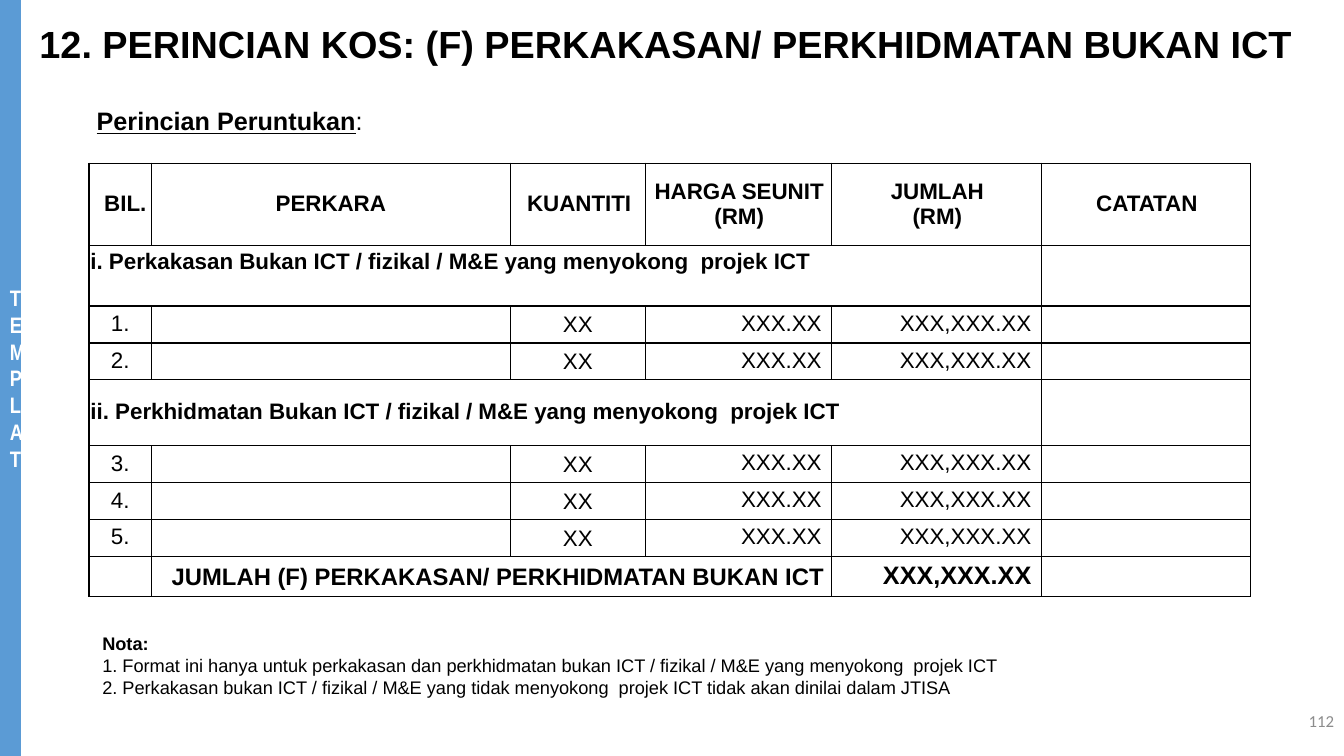
from dataclasses import dataclass

from lxml.etree import SubElement
from pptx import Presentation
from pptx.dml.color import RGBColor
from pptx.enum.shapes import MSO_SHAPE
from pptx.enum.text import MSO_ANCHOR as Anchor, PP_ALIGN as Align
from pptx.oxml.ns import qn
from pptx.util import Pt


@dataclass(frozen=True)
class Theme:
    font: str = "Arial"
    narrow: str = "Arial Narrow"
    number_font: str = "Calibri"
    ink: str = "000000"
    paper: str = "FFFFFF"
    bar: str = "5B9BD5"
    grey: str = "8C8C8C"
    title: int = 27
    heading: int = 18
    total: int = 17
    cell: int = 16
    note: int = 13
    number: int = 12


THEME = Theme()

COLUMNS = [44.6, 256.3, 96.5, 133.2, 149.8, 149.6]
HEADINGS = [["BIL."], ["PERKARA"], ["KUANTITI"], ["HARGA SEUNIT", "(RM)"],
            ["JUMLAH", "(RM)"], ["CATATAN"]]
HEADING_INSETS = [7.2, 0, 2, 1, 1, 1]
SECTIONS = [
    ("i. Perkakasan Bukan ICT / fizikal / M&E yang menyokong  projek ICT",
     43.5, Anchor.TOP, 5, ["1.", "2."]),
    ("ii. Perkhidmatan Bukan ICT / fizikal / M&E yang menyokong  projek ICT",
     47, Anchor.MIDDLE, 0, ["3.", "4.", "5."]),
]
HEADER_HEIGHT, ITEM_HEIGHT, TOTAL_HEIGHT = 58.5, 26.4, 28.6
LINE_SPACING = 15.7
NOTES = [
    "1. Format ini hanya untuk perkakasan dan perkhidmatan bukan ICT / fizikal / M&E "
    "yang menyokong  projek ICT",
    "2. Perkakasan bukan ICT / fizikal / M&E yang tidak menyokong  projek ICT "
    "tidak akan dinilai dalam JTISA",
]


def add_span(para, text, size, bold=False, color=THEME.ink, font=THEME.font):
    span = para.add_run()
    span.text = text
    span.font.name = font
    span.font.size = Pt(size)
    span.font.bold = bold
    span.font.color.rgb = RGBColor.from_string(color)
    return span


def add_text_box(page, left, top, width, height):
    frame = page.shapes.add_textbox(Pt(left), Pt(top), Pt(width), Pt(height)).text_frame
    frame.word_wrap = True
    return frame


def set_insets(cell, left=0, top=0, right=0, bottom=0):
    cell.margin_left, cell.margin_top = Pt(left), Pt(top)
    cell.margin_right, cell.margin_bottom = Pt(right), Pt(bottom)


def outline_cell(cell):
    """Clear the fill and draw a thin line on all four sides."""
    cell.fill.background()
    props = cell._tc.get_or_add_tcPr()
    for place, side in enumerate(("lnL", "lnR", "lnT", "lnB")):
        line = SubElement(props, qn(f"a:{side}"), w=str(Pt(1)))
        fill = SubElement(line, qn("a:solidFill"))
        SubElement(fill, qn("a:srgbClr"), val=THEME.ink)
        props.insert(place, line)


def write_cell(cell, lines, align=Align.CENTER, size=THEME.cell, bold=False,
               anchor=Anchor.MIDDLE, spacing=None, insets=(1, 1, 1, 0)):
    set_insets(cell, *insets)
    cell.vertical_anchor = anchor
    for index, line in enumerate(lines):
        frame = cell.text_frame
        para = frame.add_paragraph() if index else frame.paragraphs[0]
        para.alignment = align
        if spacing:
            para.line_spacing = Pt(spacing)
        add_span(para, line, size, bold)


def write_amount(cell, text, size=THEME.cell, bold=False):
    write_cell(cell, [text], Align.RIGHT, size, bold, Anchor.TOP,
               insets=(7.2, 3.6, 7.2, 3.6))


def write_item(cells, number):
    write_cell(cells[0], [number], spacing=LINE_SPACING)
    write_cell(cells[2], ["XX"])
    write_amount(cells[3], "XXX.XX")
    write_amount(cells[4], "XXX,XXX.XX")


def write_total(cells):
    cells[1].merge(cells[3])
    write_cell(cells[1], ["JUMLAH (F) PERKAKASAN/ PERKHIDMATAN BUKAN ICT"],
               Align.RIGHT, THEME.total, True, insets=(1, 1, 5.5, 0))
    write_amount(cells[4], "XXX,XXX.XX", THEME.heading, True)


def add_cost_table(page, left, top):
    heights = [HEADER_HEIGHT]
    for _, height, _, _, numbers in SECTIONS:
        heights += [height] + [ITEM_HEIGHT] * len(numbers)
    heights.append(TOTAL_HEIGHT)
    table = page.shapes.add_table(len(heights), len(COLUMNS), Pt(left), Pt(top),
                                  Pt(sum(COLUMNS)), Pt(sum(heights))).table
    table.first_row = table.horz_banding = False
    for column, width in zip(table.columns, COLUMNS):
        column.width = Pt(width)
    for row, height in zip(table.rows, heights):
        row.height = Pt(height)
    for cell in table.iter_cells():
        set_insets(cell)
        outline_cell(cell)

    rows = iter([list(row.cells) for row in table.rows])
    for cell, lines, inset in zip(next(rows), HEADINGS, HEADING_INSETS):
        write_cell(cell, lines, bold=True, insets=(inset, 0, 0, 0))
    for caption, _, anchor, top_inset, numbers in SECTIONS:
        cells = next(rows)
        cells[0].merge(cells[4])
        write_cell(cells[0], [caption], Align.LEFT, bold=True, anchor=anchor,
                   spacing=LINE_SPACING, insets=(1, top_inset, 1, 0))
        for number in numbers:
            write_item(next(rows), number)
    write_total(next(rows))


def add_side_bar(page, width, height):
    bar = page.shapes.add_shape(MSO_SHAPE.RECTANGLE, 0, 0, Pt(width), Pt(height))
    bar.shadow.inherit = False
    bar.fill.solid()
    bar.fill.fore_color.rgb = RGBColor.from_string(THEME.bar)
    bar.line.fill.background()
    frame = bar.text_frame
    frame.word_wrap = True
    frame.vertical_anchor = Anchor.MIDDLE
    para = frame.paragraphs[0]
    para.alignment = Align.CENTER
    add_span(para, "TEMPLAT", THEME.cell, True, THEME.paper, THEME.narrow)


def set_title(page, left, top, width, height):
    title = page.shapes.title
    title.left, title.top, title.width, title.height = map(Pt, (left, top, width, height))
    title.text_frame.vertical_anchor = Anchor.TOP
    para = title.text_frame.paragraphs[0]
    para.alignment = Align.LEFT
    add_span(para, "12. PERINCIAN KOS: (F) PERKAKASAN/ PERKHIDMATAN BUKAN ICT",
             THEME.title, True)


def add_subheading(page, left, top, width, height):
    para = add_text_box(page, left, top, width, height).paragraphs[0]
    add_span(para, "Perincian Peruntukan", THEME.heading, True).font.underline = True
    add_span(para, ":", THEME.heading)


def add_notes_block(page, left, top, width, height):
    frame = add_text_box(page, left, top, width, height)
    add_span(frame.paragraphs[0], "Nota:", THEME.note, True)
    for note in NOTES:
        add_span(frame.add_paragraph(), note, THEME.note)


def add_page_number(page, left, top, width, height):
    frame = add_text_box(page, left, top, width, height)
    frame.vertical_anchor = Anchor.MIDDLE
    para = frame.paragraphs[0]
    para.alignment = Align.RIGHT
    add_span(para, "112", THEME.number, color=THEME.grey, font=THEME.number_font)


def main():
    deck = Presentation()
    deck.slide_width, deck.slide_height = Pt(960), Pt(540)
    page = deck.slides.add_slide(deck.slide_layouts[5])
    add_side_bar(page, 15, 540)
    add_cost_table(page, 63.6, 116.6)
    add_notes_block(page, 66, 448, 680, 55)
    add_subheading(page, 62, 72, 601, 29)
    set_title(page, 21, 11, 939, 58)
    add_page_number(page, 744, 500.5, 216, 29)
    deck.save("out.pptx")


if __name__ == "__main__":
    main()
